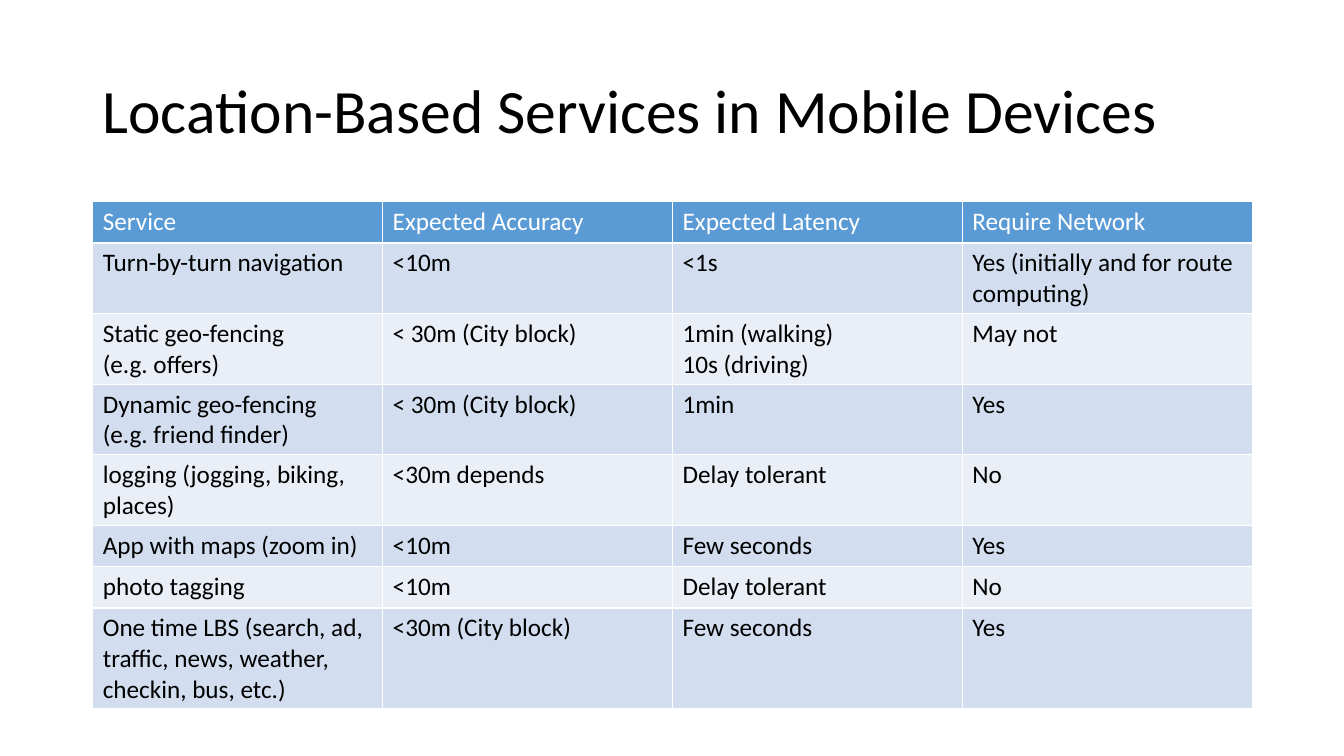
from dataclasses import dataclass

from lxml import etree
from pptx import Presentation
from pptx import util as u
from pptx.dml.color import RGBColor
from pptx.enum import text
from pptx.oxml import ns


@dataclass(frozen=True)
class Theme:
    """Colours, font and type sizes of the slide."""
    font: str = "Calibri"
    title_size: int = 44
    table_size: int = 18
    ink: str = "000000"
    paper: str = "FFFFFF"
    header: str = "5B9BD5"
    bands: tuple = ("D2DEEF", "EAEFF7")
    border_width: int = 1


THEME = Theme()
TITLE = "Location-Based Services in Mobile Devices"
TITLE_BOX = (0.92, 0.4, 11.5, 1.45)
TABLE_BOX = (0.92, 2, 11.5, 3.28)
SERVICES = [
    ("Service", "Expected Accuracy", "Expected Latency", "Require Network"),
    ("Turn-by-turn navigation", "<10m", "<1s", "Yes (initially and for route computing)"),
    ("Static geo-fencing \v(e.g. offers)", "< 30m (City block)",
     "1min (walking)\v10s (driving)", "May not"),
    ("Dynamic geo-fencing \v(e.g. friend finder)", "< 30m (City block)", "1min", "Yes"),
    ("logging (jogging, biking, places)", "<30m depends", "Delay tolerant", "No"),
    ("App with maps (zoom in)", "<10m", "Few seconds", "Yes"),
    ("photo tagging", "<10m", "Delay tolerant", "No"),
    ("One time LBS (search, ad, traffic, news, weather, checkin, bus, etc.)",
     "<30m (City block)", "Few seconds", "Yes"),
]


def format_runs(paragraph, size, color):
    """Give every run of a paragraph the theme font, a size and a colour."""
    for run in paragraph.runs:
        run.font.name = THEME.font
        run.font.size = u.Pt(size)
        run.font.color.rgb = RGBColor.from_string(color)


def add_borders(cell):
    """Draw a thin line along all four sides of a table cell."""
    properties = cell._tc.get_or_add_tcPr()
    for side in ("lnL", "lnR", "lnT", "lnB"):
        line = etree.SubElement(properties, ns.qn(f"a:{side}"),
                                w=str(u.Pt(THEME.border_width)))
        fill = etree.SubElement(line, ns.qn("a:solidFill"))
        etree.SubElement(fill, ns.qn("a:srgbClr"), val=THEME.paper)


def add_title(slide, box):
    """Place the slide title, centred vertically in its box."""
    shape = slide.shapes.add_textbox(*map(u.Inches, box))
    frame = shape.text_frame
    frame.word_wrap = True
    frame.vertical_anchor = text.MSO_ANCHOR.MIDDLE
    frame.text = TITLE
    paragraph = frame.paragraphs[0]
    paragraph.line_spacing = 0.9
    format_runs(paragraph, THEME.title_size, THEME.ink)


def add_services_table(slide, box):
    """Fill the box with equal columns and banded rows under a header."""
    shape = slide.shapes.add_table(len(SERVICES), len(SERVICES[0]), *map(u.Inches, box))
    table = shape.table
    table.first_row = table.horz_banding = False
    for row_index, values in enumerate(SERVICES):
        is_header = row_index == 0
        fill = THEME.header if is_header else THEME.bands[(row_index - 1) % 2]
        color = THEME.paper if is_header else THEME.ink
        for column_index, value in enumerate(values):
            cell = table.cell(row_index, column_index)
            add_borders(cell)
            cell.fill.solid()
            cell.fill.fore_color.rgb = RGBColor.from_string(fill)
            cell.text_frame.text = value
            format_runs(cell.text_frame.paragraphs[0], THEME.table_size, color)


def main():
    """Build the presentation and save it."""
    presentation = Presentation()
    presentation.slide_width = u.Inches(13.33)
    presentation.slide_height = u.Inches(7.5)
    slide = presentation.slides.add_slide(presentation.slide_layouts[6])
    add_title(slide, TITLE_BOX)
    add_services_table(slide, TABLE_BOX)
    presentation.save("out.pptx")


if __name__ == "__main__":
    main()
